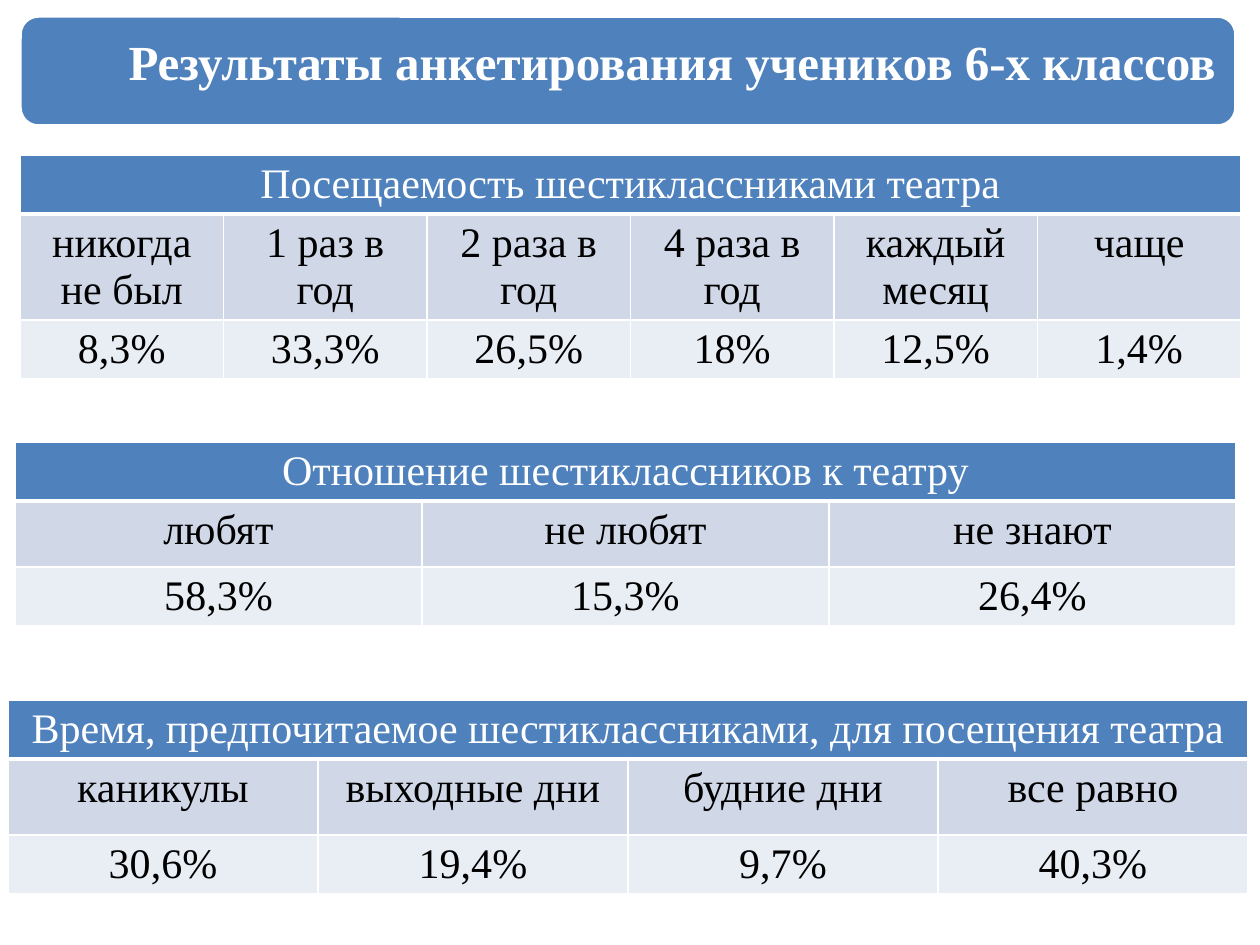
from dataclasses import dataclass

from lxml.etree import SubElement
from pptx import Presentation
from pptx.dml.color import RGBColor
from pptx.enum.shapes import MSO_SHAPE
from pptx.enum.text import MSO_ANCHOR, PP_ALIGN
from pptx.oxml.ns import qn
from pptx.util import Emu, Pt


@dataclass(frozen=True)
class Theme:
    font: str = "Times New Roman"
    title_size: int = 28
    table_size: int = 24
    accent: str = "4F81BD"
    label_fill: str = "D0D8E8"
    value_fill: str = "E9EDF4"
    light: str = "FFFFFF"
    dark: str = "000000"
    line: int = 1
    heavy_line: int = 3
    banner_line: int = 2


THEME = Theme()

TABLES = [
    ((20, 155, 1221), (58, 106, 58), "Посещаемость шестиклассниками театра",
     {"никогда не был": "8,3%", "1 раз в год": "33,3%", "2 раза в год": "26,5%",
      "4 раза в год": "18%", "каждый месяц": "12,5%", "чаще": "1,4%"}),
    ((15, 442, 1221), (59, 66, 58), "Отношение шестиклассников к театру",
     {"любят": "58,3%", "не любят": "15,3%", "не знают": "26,4%"}),
    ((8, 700, 1240), (59, 76, 59),
     "Время, предпочитаемое шестиклассниками, для посещения театра",
     {"каникулы": "30,6%", "выходные дни": "19,4%",
      "будние дни": "9,7%", "все равно": "40,3%"}),
]


def px(length):
    return Emu(round(length * 914400 / 126))


def color(name):
    return RGBColor.from_string(name)


def format_text(frame, size, ink, bold=False):
    for para in frame.paragraphs:
        para.alignment = PP_ALIGN.CENTER
        for span in para.runs:
            span.font.name = THEME.font
            span.font.size = Pt(size)
            span.font.bold = bold
            span.font.color.rgb = color(ink)


def add_borders(cell, bottom):
    properties = cell._tc.get_or_add_tcPr()
    widths = {"lnL": THEME.line, "lnR": THEME.line, "lnT": THEME.line, "lnB": bottom}
    for position, (side, width) in enumerate(widths.items()):
        line = SubElement(properties, qn(f"a:{side}"), w=str(Pt(width)))
        fill = SubElement(line, qn("a:solidFill"))
        SubElement(fill, qn("a:srgbClr"), val=THEME.light)
        properties.insert(position, line)


def add_banner(page, box, text):
    left, top, width, height = box
    banner = page.shapes.add_shape(
        MSO_SHAPE.ROUNDED_RECTANGLE, px(left), px(top), px(width), px(height))
    banner.shadow.inherit = False
    banner.fill.solid()
    banner.fill.fore_color.rgb = color(THEME.accent)
    banner.line.color.rgb = color(THEME.light)
    banner.line.width = Pt(THEME.banner_line)

    title = page.shapes.title
    title.left, title.top = px(left + 78), px(top)
    title.width, title.height = px(width - 68), px(height - 12)
    frame = title.text_frame
    frame.text = text
    frame.word_wrap = True
    frame.vertical_anchor = MSO_ANCHOR.MIDDLE
    frame.margin_left = frame.margin_right = px(15)
    frame.margin_top = frame.margin_bottom = px(15)
    frame.paragraphs[0].line_spacing = 0.9
    format_text(frame, THEME.title_size, THEME.light, bold=True)
    banner.element.addnext(title.element)


def add_survey_table(page, box, heights, heading, answers):
    left, top, width = box
    count = len(answers)
    table = page.shapes.add_table(
        len(heights), count, px(left), px(top), px(width), px(sum(heights))).table
    for column in table.columns:
        column.width = px(width / count)
    for row, height in zip(table.rows, heights):
        row.height = px(height)
    table.cell(0, 0).merge(table.cell(0, count - 1))

    rows = [
        ([heading] + [""] * (count - 1), THEME.accent, THEME.light, THEME.heavy_line),
        (answers.keys(), THEME.label_fill, THEME.dark, THEME.line),
        (answers.values(), THEME.value_fill, THEME.dark, THEME.line),
    ]
    for row, (texts, fill, ink, bottom) in zip(table.rows, rows):
        for cell, text in zip(row.cells, texts):
            cell.fill.solid()
            cell.fill.fore_color.rgb = color(fill)
            add_borders(cell, bottom)
            if text:
                cell.text_frame.text = text
                format_text(cell.text_frame, THEME.table_size, ink)


def main():
    deck = Presentation()
    deck.slide_width, deck.slide_height = px(1260), px(945)
    page = deck.slides.add_slide(deck.slide_layouts[5])
    add_banner(page, (20, 16, 1216, 110), "Результаты анкетирования учеников 6-х классов")
    for box, heights, heading, answers in TABLES:
        add_survey_table(page, box, heights, heading, answers)
    deck.save("out.pptx")


if __name__ == "__main__":
    main()
